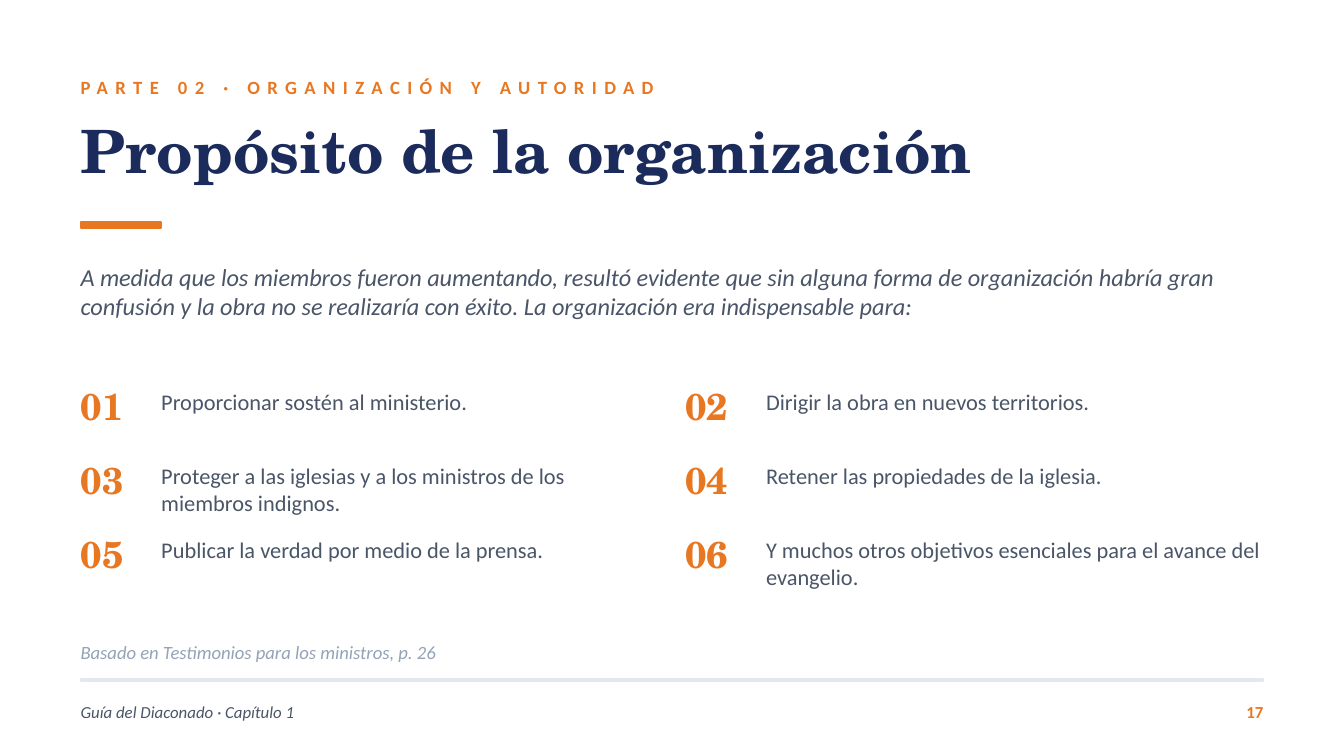
from pptx import Presentation
from pptx.dml.color import RGBColor
from pptx.enum.shapes import MSO_SHAPE as Shape
from pptx.enum.text import MSO_ANCHOR as Anchor, PP_ALIGN as Align
from pptx.util import Inches, Pt

# Content
PART = "PARTE 02 · ORGANIZACIÓN Y AUTORIDAD"
TITLE = "Propósito de la organización"
INTRO = (
    "A medida que los miembros fueron aumentando, resultó evidente que sin "
    "alguna forma de organización habría gran confusión y la obra no se "
    "realizaría con éxito. La organización era indispensable para:"
)
GOALS = [
    "Proporcionar sostén al ministerio.",
    "Dirigir la obra en nuevos territorios.",
    "Proteger a las iglesias y a los ministros de los miembros indignos.",
    "Retener las propiedades de la iglesia.",
    "Publicar la verdad por medio de la prensa.",
    "Y muchos otros objetivos esenciales para el avance del evangelio.",
]
SOURCE = "Basado en Testimonios para los ministros, p. 26"
GUIDE = "Guía del Diaconado · Capítulo 1"
PAGE = "17"

# Style
ORANGE = RGBColor(0xE8, 0x77, 0x22)
NAVY = RGBColor(0x1A, 0x2B, 0x5C)
SLATE = RGBColor(0x4A, 0x55, 0x68)
MIST = RGBColor(0x94, 0xA3, 0xB8)
PALE = RGBColor(0xE2, 0xE8, 0xF0)
SANS, SERIF = "Calibri", "TeX Gyre Schola"

# Layout, in inches
LEFT, WIDTH = 0.6, 8.8
TOP, ROW, COLUMN, INDENT = 2.85, 0.55, 4.5, 0.6

# Slide in 16:9
deck = Presentation()
deck.slide_width = Inches(10)
deck.slide_height = Inches(10 * 9 / 16)
slide = deck.slides.add_slide(deck.slide_layouts[6])


def add_text(text, x, y, w, h, size, color, face=SANS, bold=False,
             italic=False, middle=False, align=Align.LEFT, spacing=0):
    box = slide.shapes.add_textbox(Inches(x), Inches(y), Inches(w), Inches(h))
    frame = box.text_frame
    frame.word_wrap = True
    frame.margin_left = frame.margin_right = 0
    frame.margin_top = frame.margin_bottom = 0
    frame.vertical_anchor = Anchor.MIDDLE if middle else Anchor.TOP
    para = frame.paragraphs[0]
    para.alignment = align
    run = para.add_run()
    run.text = text
    font = run.font
    font.name, font.size, font.color.rgb = face, Pt(size), color
    font.bold, font.italic = bold, italic
    if spacing:
        run._r.get_or_add_rPr().set("spc", str(spacing * 100))


def add_bar(y, w, h, color):
    bar = slide.shapes.add_shape(
        Shape.RECTANGLE, Inches(LEFT), Inches(y), Inches(w), Inches(h))
    bar.shadow.inherit = False
    bar.fill.solid()
    bar.fill.fore_color.rgb = bar.line.color.rgb = color
    bar.line.width = Pt(1)


# Heading
add_text(PART, LEFT, 0.5, 6, 0.3, 10, ORANGE, bold=True, middle=True, spacing=4)
add_text(TITLE, LEFT, 0.85, 9, 0.7, 32, NAVY, SERIF, bold=True)
add_bar(1.65, 0.6, 0.05, ORANGE)
add_text(INTRO, LEFT, 1.95, 9, 0.7, 13, SLATE, italic=True)

# Numbered goals in two columns
for i, goal in enumerate(GOALS):
    row, col = divmod(i, 2)
    x, y = LEFT + col * COLUMN, TOP + row * ROW
    add_text(f"{i + 1:02}", x, y, INDENT, 0.4, 20, ORANGE, SERIF, bold=True)
    add_text(goal, x + INDENT, y + 0.04, 3.7, ROW, 12, SLATE)

# Source and footer
add_text(SOURCE, LEFT, 4.7, 9, 0.3, 10, MIST, italic=True, middle=True)
add_bar(5.05, WIDTH, 0.02, PALE)
add_text(GUIDE, LEFT, 5.15, 6, 0.3, 9, SLATE, italic=True, middle=True)
add_text(PAGE, LEFT + WIDTH - 0.5, 5.15, 0.5, 0.3, 9, ORANGE, bold=True,
         middle=True, align=Align.RIGHT)

deck.save("out.pptx")
